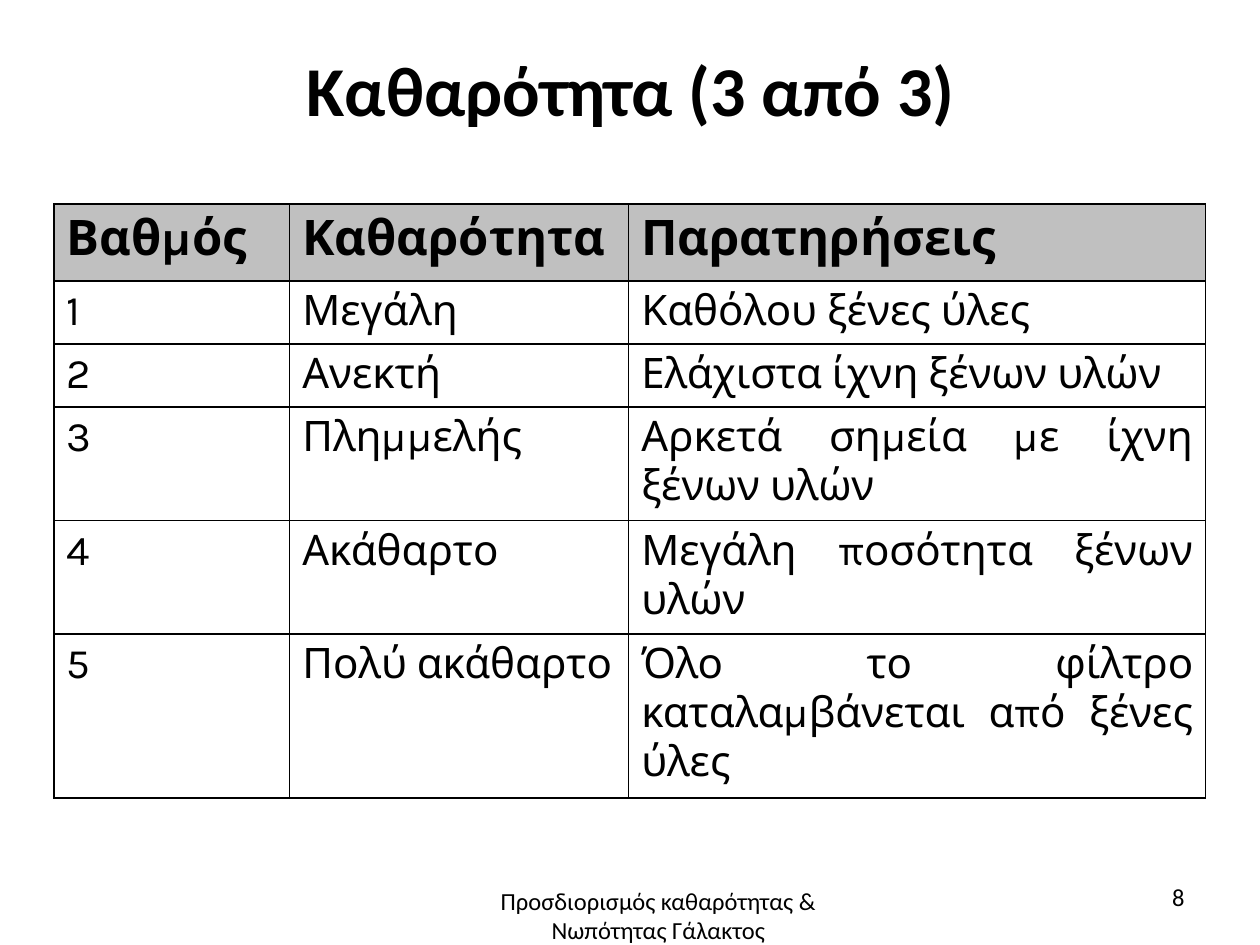
import pptx
import pptx.util
import pptx.dml.color
import pptx.enum.text
import pptx.oxml
import pptx.oxml.ns
from pptx.util import Inches

BLACK = pptx.dml.color.RGBColor(0x00, 0x00, 0x00)
GREY = pptx.dml.color.RGBColor(0xC0, 0xC0, 0xC0)
ALIGN = pptx.enum.text.PP_ALIGN
ANCHOR = pptx.enum.text.MSO_ANCHOR

TITLE = {"name": "Calibri", "size": pptx.util.Pt(40), "bold": True}
HEAD = {"name": "Karla", "size": pptx.util.Pt(28), "bold": True}
BODY = {"name": "Karla", "size": pptx.util.Pt(24), "bold": False}
FOOT = {"name": "Calibri", "size": pptx.util.Pt(14), "bold": False}

WIDTHS = [1.87, 2.69, 4.58]
HEIGHTS = [0.61, 0.43, 0.43, 0.53, 0.53, 0.77]
GRADES = [
    ("Βαθμός", "Καθαρότητα", "Παρατηρήσεις"),
    ("1", "Μεγάλη", "Καθόλου ξένες ύλες"),
    ("2", "Ανεκτή", "Ελάχιστα ίχνη ξένων υλών"),
    ("3", "Πλημμελής", "Αρκετά σημεία με ίχνη ξένων υλών"),
    ("4", "Ακάθαρτο", "Μεγάλη ποσότητα ξένων υλών"),
    ("5", "Πολύ ακάθαρτο", "Όλο το φίλτρο καταλαμβάνεται από ξένες ύλες"),
]


class Page:
    def __init__(self, slide, color):
        self.slide = slide
        self.color = color

    def fill_text(self, frame, text, style, align):
        par = frame.paragraphs[0]
        par.alignment = align
        run = par.add_run()
        run.text = text
        for key, value in style.items():
            setattr(run.font, key, value)
        run.font.color.rgb = self.color
        return par

    def text(self, box, text, style, align, **frame_values):
        shape = self.slide.shapes.add_textbox(*map(Inches, box))
        frame = shape.text_frame
        frame.word_wrap = True
        for key, value in frame_values.items():
            setattr(frame, key, value)
        return self.fill_text(frame, text, style, align)

    def border(self, cell):
        """Draw a 1 pt line on all four sides of the cell."""
        props = cell._tc.get_or_add_tcPr()
        for place, side in enumerate(("lnL", "lnR", "lnT", "lnB")):
            props.insert(place, pptx.oxml.parse_xml(
                f'<a:{side} {pptx.oxml.ns.nsdecls("a")} w="12700"><a:solidFill>'
                f'<a:srgbClr val="{self.color}"/></a:solidFill></a:{side}>'))

    def table(self, left, top, widths, heights, rows):
        box = map(Inches, (left, top, sum(widths), sum(heights)))
        table = self.slide.shapes.add_table(len(rows), len(widths), *box).table
        for col, width in zip(table.columns, widths):
            col.width = Inches(width)
        for i, (row, height) in enumerate(zip(table.rows, heights)):
            row.height = Inches(height)
            for cell, text in zip(row.cells, rows[i]):
                if i == 0:
                    cell.fill.solid()
                    cell.fill.fore_color.rgb = GREY
                else:
                    cell.fill.background()
                self.border(cell)
                self.fill_text(cell.text_frame, text, BODY if i else HEAD, ALIGN.JUSTIFY)


def main():
    deck = pptx.Presentation()
    deck.slide_width, deck.slide_height = Inches(10), Inches(7.5)
    page = Page(deck.slides.add_slide(deck.slide_layouts[6]), BLACK)

    title = page.text((0.51, 0.05, 8.99, 1.34), "Καθαρότητα (3 από 3)", TITLE,
                      ALIGN.CENTER, vertical_anchor=ANCHOR.MIDDLE, margin_left=0,
                      margin_right=0, margin_top=Inches(0.02), margin_bottom=0)
    title.line_spacing = 0.98
    page.table(0.43, 1.62, WIDTHS, HEIGHTS, GRADES)
    page.text((3.48, 6.98, 3.49, 0.55),
              "Προσδιορισμός καθαρότητας & Νωπότητας Γάλακτος", FOOT, ALIGN.CENTER)
    page.text((7.17, 6.95, 2.33, 0.4), "8", FOOT, ALIGN.RIGHT)

    deck.save("out.pptx")


if __name__ == "__main__":
    main()
